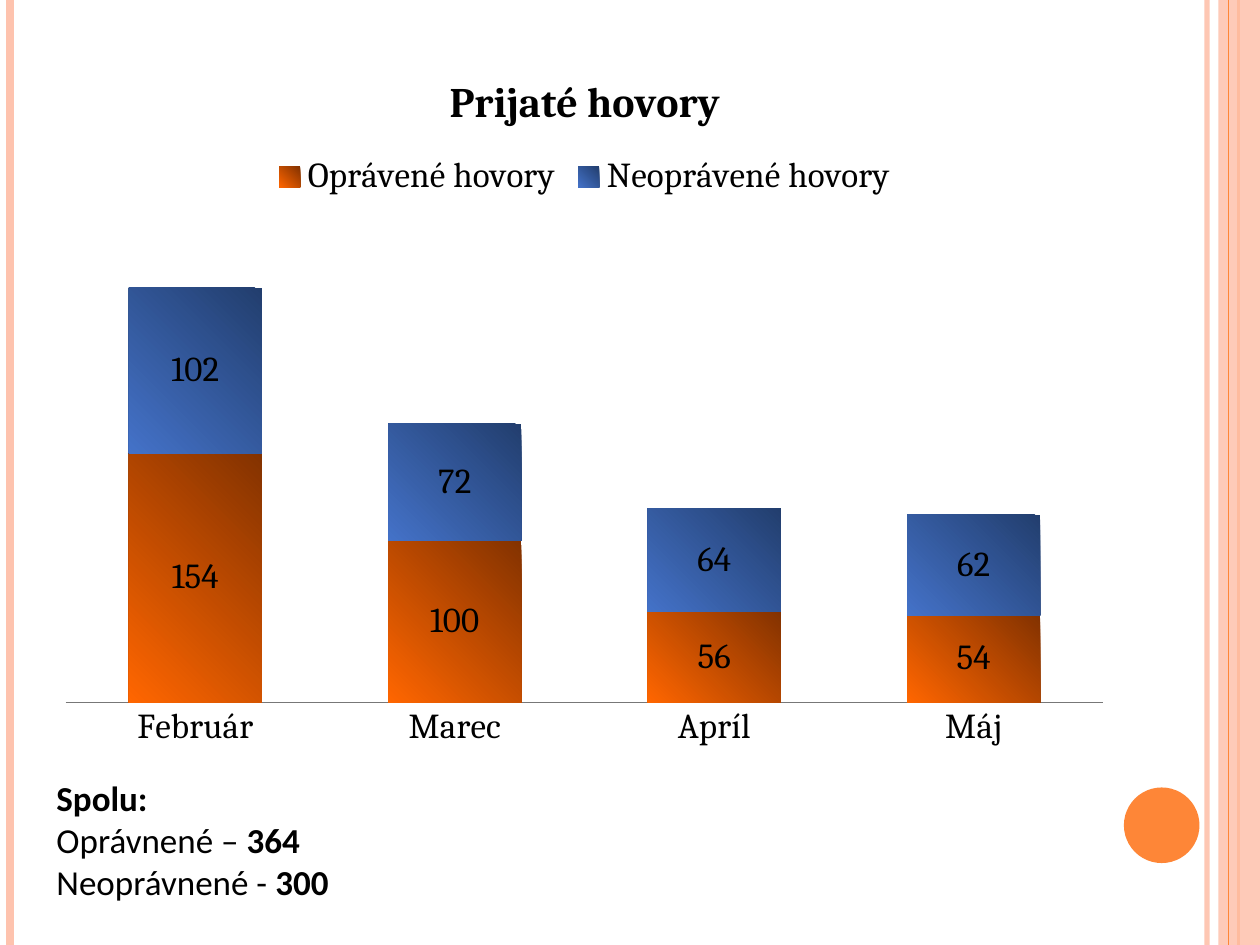
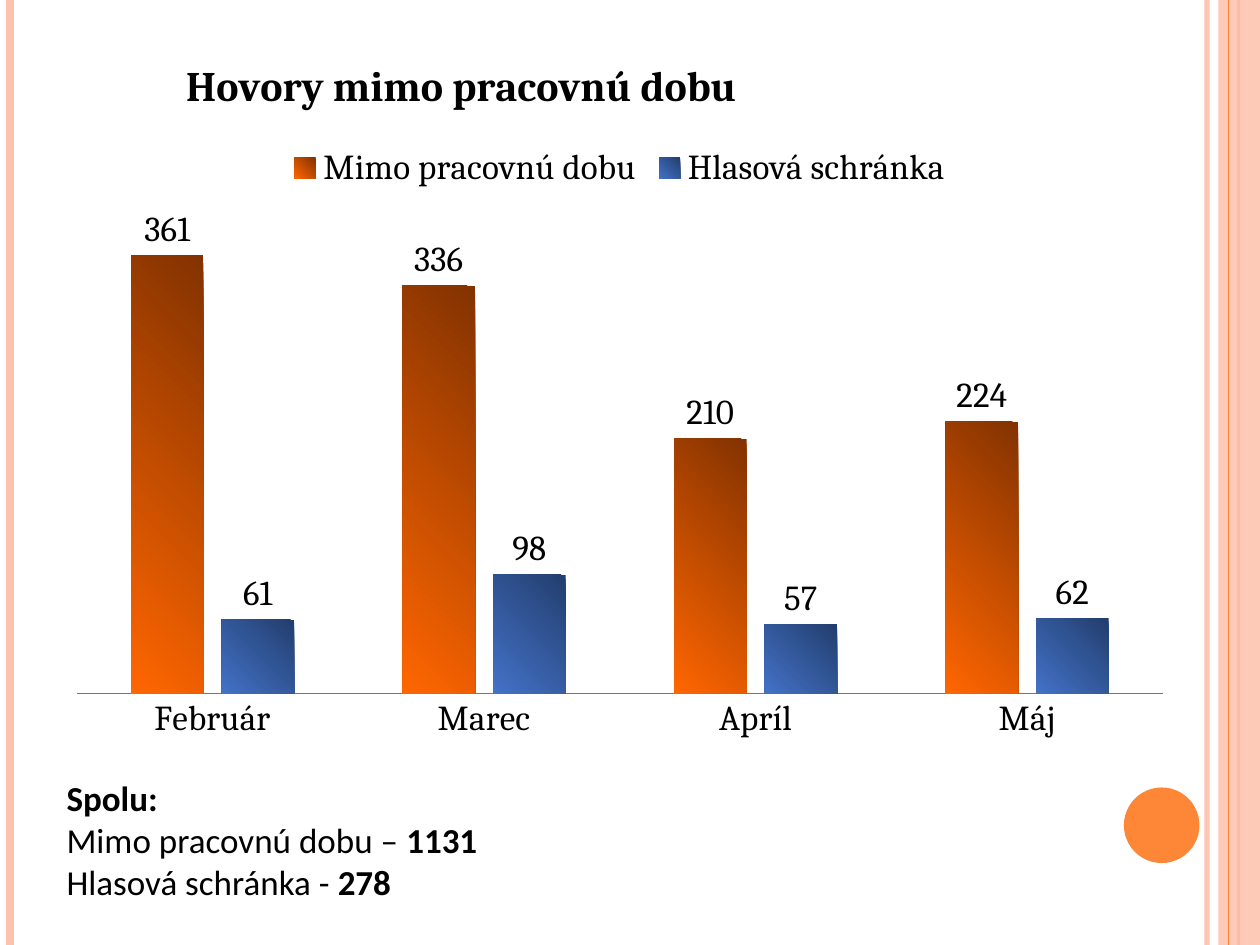
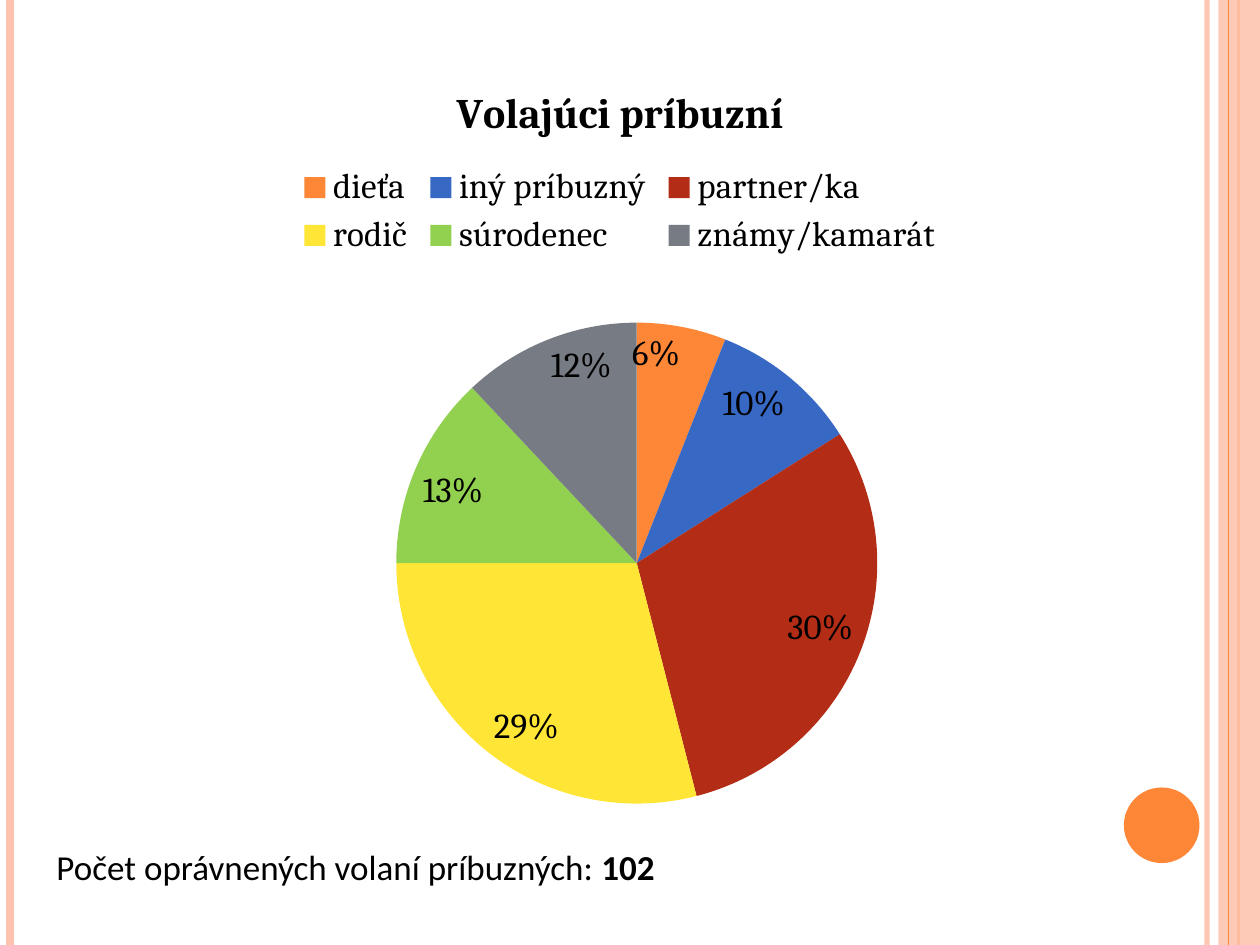
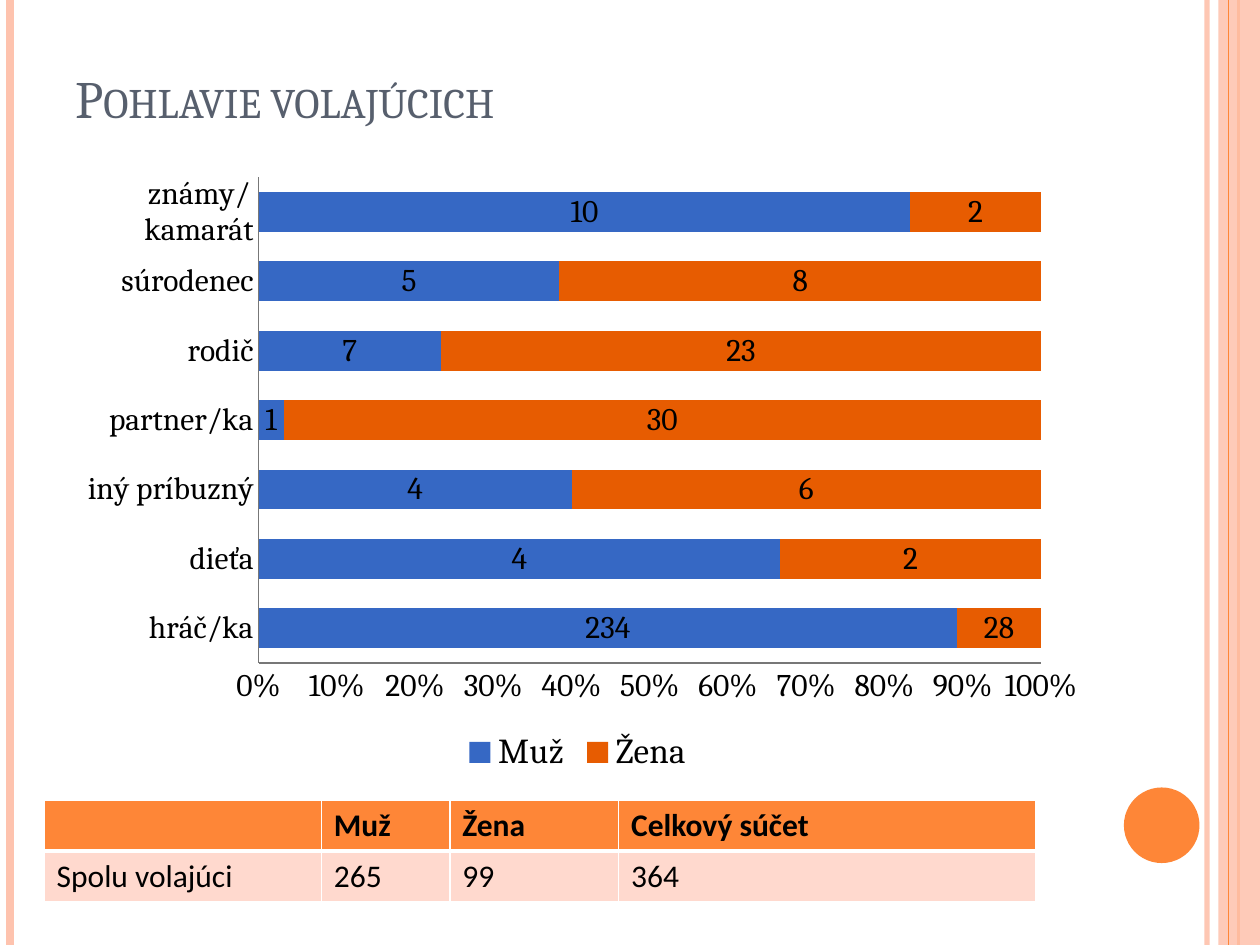
from lxml import etree
from pptx import Presentation
from pptx.chart.data import CategoryChartData
from pptx.dml.color import RGBColor
from pptx.enum.chart import XL_CHART_TYPE, XL_LABEL_POSITION, XL_LEGEND_POSITION, XL_TICK_MARK
from pptx.enum.shapes import MSO_CONNECTOR, MSO_SHAPE
from pptx.enum.text import MSO_ANCHOR, MSO_AUTO_SIZE
from pptx.oxml import parse_xml
from pptx.oxml.ns import nsdecls, qn
from pptx.util import Inches, Pt

STACKED = XL_CHART_TYPE.COLUMN_STACKED
CLUSTERED = XL_CHART_TYPE.COLUMN_CLUSTERED
PIE = XL_CHART_TYPE.PIE
BAR_100 = XL_CHART_TYPE.BAR_STACKED_100
TOP, BOTTOM = XL_LEGEND_POSITION.TOP, XL_LEGEND_POSITION.BOTTOM
CENTER = XL_LABEL_POSITION.CENTER
OUTSIDE = XL_LABEL_POSITION.OUTSIDE_END
INSIDE = XL_LABEL_POSITION.INSIDE_END
NO_TICK = XL_TICK_MARK.NONE
STRAIGHT = MSO_CONNECTOR.STRAIGHT
RECTANGLE, OVAL = MSO_SHAPE.RECTANGLE, MSO_SHAPE.OVAL
GROW = MSO_AUTO_SIZE.SHAPE_TO_FIT_TEXT
ANCHOR_BOTTOM = MSO_ANCHOR.BOTTOM

SERIF, SANS = "Cambria", "Calibri"
BLACK, WHITE, GREY = "000000", "FFFFFF", "777777"
ORANGE, PEACH, PALE = "FE8637", "FEC3AE", "FFD9CE"
BLUE, DEEP_ORANGE, SLATE = "3668C4", "E75C01", "575F6D"
PIE_COLORS = [ORANGE, BLUE, "B32C16", "FFE636", "92D050", "777C84"]
GLOWS = [("FF6600", "833200"), ("4472C8", "223E6E")]
MONTHS = ["Február", "Marec", "Apríl", "Máj"]
RELATIVES = ["dieťa", "iný príbuzný", "partner/ka", "rodič", "súrodenec", "známy/kamarát"]


def rgb(value):
    return RGBColor.from_string(value)


def set_font(font, size, color=BLACK, name=SERIF, bold=False):
    font.size = Pt(size)
    font.name = name
    font.bold = bold
    font.color.rgb = rgb(color)


def set_alpha(element, percent):
    color = element.find(".//" + qn("a:srgbClr"))
    etree.SubElement(color, qn("a:alpha"), val=str(percent * 1000))


def add_rule(page, x, color, width, alpha=100):
    rule = page.shapes.add_connector(STRAIGHT, Inches(x), 0, Inches(x), Inches(7.5))
    rule.line.color.rgb = rgb(color)
    rule.line.width = Pt(width)
    if alpha < 100:
        set_alpha(rule.line._ln, alpha)
    etree.SubElement(rule._element.spPr, qn("a:effectLst"))


def add_filled(page, kind, box, color):
    shape = page.shapes.add_shape(kind, *map(Inches, box))
    shape.shadow.inherit = False
    shape.fill.solid()
    shape.fill.fore_color.rgb = rgb(color)
    shape.line.fill.background()
    return shape


def add_frame(page):
    add_rule(page, 9.58, PEACH, 3, 93)
    add_rule(page, 0.08, PEACH, 4.5)
    add_rule(page, 9.83, ORANGE, 1.5)
    band = add_filled(page, RECTANGLE, (9.67, 0, 0.33, 7.5), PEACH)
    set_alpha(band._element.spPr, 87)
    add_rule(page, 9.75, ORANGE, 0.75)
    add_filled(page, OVAL, (8.92, 6.25, 0.6, 0.6), ORANGE)


def new_page(deck):
    page = deck.slides.add_slide(deck.slide_layouts[6])
    add_frame(page)
    return page


def add_title(page, box, text):
    title = page.shapes.add_textbox(*map(Inches, box))
    frame = title.text_frame
    frame.word_wrap = True
    frame.vertical_anchor = ANCHOR_BOTTOM
    span = frame.paragraphs[0].add_run()
    span.text = text
    set_font(span.font, 30, SLATE)
    span._r.get_or_add_rPr().set("cap", "small")


def add_summary(page, box, lines):
    summary = page.shapes.add_textbox(*map(Inches, box))
    frame = summary.text_frame
    frame.word_wrap = True
    frame.auto_size = GROW
    for index, (label, total) in enumerate(lines):
        para = frame.add_paragraph() if index else frame.paragraphs[0]
        set_font(para.font, 20, name=SANS)
        for text, bold in ((label, False), (total, True)):
            if text:
                span = para.add_run()
                span.text = text
                span.font.bold = bold


def place(parent, index, **parts):
    old = parent.find(qn("c:layout"))
    if old is not None:
        parent.remove(old)
    values = "".join(f'<c:{key} val="{value}"/>' for key, value in parts.items())
    parent.insert(index, parse_xml(
        f'<c:layout {nsdecls("c")}><c:manualLayout>{values}</c:manualLayout></c:layout>'))


def add_chart(page, box, kind, categories, series, plot_box, label_position,
              title=None, legend=TOP, label_size=20, label_format="0"):
    data = CategoryChartData()
    data.categories = categories
    for name, values in series.items():
        data.add_series(name, values)
    chart = page.shapes.add_chart(kind, *map(Inches, box), data).chart
    set_font(chart.font, 10)
    chart.has_title = bool(title)
    if title:
        frame = chart.chart_title.text_frame
        frame.text = title
        set_font(frame.paragraphs[0].font, 24, bold=True)
        chart.chart_title.include_in_layout = False
    chart.has_legend = True
    chart.legend.position = legend
    chart.legend.include_in_layout = False
    set_font(chart.legend.font, 20)
    x, y, w, h = plot_box
    place(chart._chartSpace.chart.plotArea, 0, layoutTarget="inner",
          xMode="edge", yMode="edge", x=x, y=y, w=w, h=h)
    chart.plots[0].vary_by_categories = kind == PIE
    for part in chart.plots[0].series:
        labels = part.data_labels
        labels.show_value = kind != PIE
        labels.show_percentage = kind == PIE
        labels.number_format = label_format
        labels.number_format_is_linked = False
        labels.position = label_position
        set_font(labels.font, label_size)
    return chart


def style_axes(chart, size, gap, overlap):
    chart.plots[0].gap_width = gap
    chart.plots[0].overlap = overlap
    chart.value_axis.has_major_gridlines = False
    for axis in (chart.category_axis, chart.value_axis):
        axis.major_tick_mark = axis.minor_tick_mark = NO_TICK
        axis.format.line.color.rgb = rgb(GREY)
        set_font(axis.tick_labels.font, size)


def glow(series, inner, outer):
    fill = series.format.fill
    fill.gradient()
    for stop, color in zip(fill.gradient_stops, (inner, outer)):
        stop.color.rgb = rgb(color)
    gradient = series._element.find(".//" + qn("a:gradFill"))
    gradient.remove(gradient.find(qn("a:lin")))
    circle = etree.SubElement(gradient, qn("a:path"), path="circle")
    etree.SubElement(circle, qn("a:fillToRect"), t="100000", r="100000")


def add_calls_chart(page, box, kind, title, series, maximum, gap, overlap):
    position = CENTER if kind == STACKED else OUTSIDE
    chart = add_chart(page, box, kind, MONTHS, series, (0.02, 0.24, 0.96, 0.68), position, title)
    style_axes(chart, 20, gap, overlap)
    chart.value_axis.visible = False
    chart.value_axis.minimum_scale = 0
    chart.value_axis.maximum_scale = maximum
    for part, colors in zip(chart.plots[0].series, GLOWS):
        part.invert_if_negative = False
        glow(part, *colors)
    return chart


def add_relatives_chart(page, box):
    chart = add_chart(page, box, PIE, RELATIVES, {"Series 1": [6, 10, 30, 29, 13, 12]},
                      (0.3, 0.35, 0.43, 0.63), INSIDE, "Volajúci príbuzní", label_format="0%")
    for index, color in enumerate(PIE_COLORS):
        fill = chart.plots[0].series[0].points[index].format.fill
        fill.solid()
        fill.fore_color.rgb = rgb(color)


def add_gender_chart(page, box):
    series = {"Muž": [234, 4, 4, 1, 7, 5, 10], "Žena": [28, 2, 6, 30, 23, 8, 2]}
    chart = add_chart(page, box, BAR_100, ["hráč/ka"] + RELATIVES, series,
                      (0.19, 0.02, 0.76, 0.79), CENTER, legend=BOTTOM, label_size=18)
    style_axes(chart, 18, 75, 100)
    chart.value_axis.major_unit = 0.1
    chart.value_axis.tick_labels.number_format = "0%"
    chart.value_axis.tick_labels.number_format_is_linked = False
    for part, color in zip(chart.plots[0].series, (BLUE, DEEP_ORANGE)):
        part.invert_if_negative = False
        part.format.fill.solid()
        part.format.fill.fore_color.rgb = rgb(color)


def set_borders(cell, widths):
    properties = cell._tc.get_or_add_tcPr()
    for index, (side, width) in enumerate(zip("LRTB", widths)):
        properties.insert(index, parse_xml(
            f'<a:ln{side} {nsdecls("a")} w="{Pt(width)}"><a:solidFill>'
            f'<a:srgbClr val="{WHITE}"/></a:solidFill></a:ln{side}>'))


def add_totals_table(page, box, rows, widths):
    table = page.shapes.add_table(len(rows), len(widths), *map(Inches, box)).table
    for column, width in zip(table.columns, widths):
        column.width = Inches(width)
    for row_index, row in enumerate(rows):
        header = row_index == 0
        for column_index, text in enumerate(row):
            cell = table.cell(row_index, column_index)
            cell.text = text
            set_font(cell.text_frame.paragraphs[0].font, 18, name=SANS, bold=header)
            cell.fill.solid()
            cell.fill.fore_color.rgb = rgb(ORANGE if header else PALE)
            set_borders(cell, (1, 1, 1, 3) if header else (1, 1, 3, 1))


def received_calls(deck):
    page = new_page(deck)
    series = {"Oprávené hovory": [154, 100, 56, 54], "Neoprávené hovory": [102, 72, 64, 62]}
    add_calls_chart(page, (0.35, 0.36, 8.58, 5.67), STACKED, "Prijaté hovory", series, 300, 95, 100)
    add_summary(page, (0.35, 6.11, 3.54, 1.11),
                [("", "Spolu:"), ("Oprávnené – ", "364"), ("Neoprávnené - ", "300")])


def after_hours_calls(deck):
    page = new_page(deck)
    series = {"Mimo pracovnú dobu": [361, 336, 210, 224], "Hlasová schránka": [61, 98, 57, 62]}
    chart = add_calls_chart(page, (0.43, 0.29, 8.98, 5.67), CLUSTERED,
                            "Hovory mimo pracovnú dobu", series, 400, 150, -25)
    place(chart.chart_title._element, 1, xMode="edge", yMode="edge", x=0.11, y=0.02)
    add_summary(page, (0.43, 6.11, 3.46, 1.11),
                [("", "Spolu:"), ("Mimo pracovnú dobu – ", "1131"), ("Hlasová schránka - ", "278")])


def calling_relatives(deck):
    page = new_page(deck)
    add_relatives_chart(page, (0.43, 0.44, 8.98, 6.06))
    add_summary(page, (0.35, 6.66, 5.2, 0.44),
                [("Počet oprávnených volaní príbuzných: ", "102")])


def caller_gender(deck):
    page = new_page(deck)
    add_title(page, (0.5, 0.3, 8.17, 0.77), "Pohlavie volajúcich")
    add_gender_chart(page, (0.5, 1.31, 8.17, 4.88))
    rows = [["", "Muž", "Žena", "Celkový súčet"], ["Spolu volajúci", "265", "99", "364"]]
    add_totals_table(page, (0.35, 6.35, 7.87, 0.81), rows, [2.2, 1.02, 1.34, 3.31])


def main():
    deck = Presentation()
    deck.slide_width, deck.slide_height = Inches(10), Inches(7.5)
    for build in (received_calls, after_hours_calls, calling_relatives, caller_gender):
        build(deck)
    deck.save("out.pptx")


if __name__ == "__main__":
    main()
